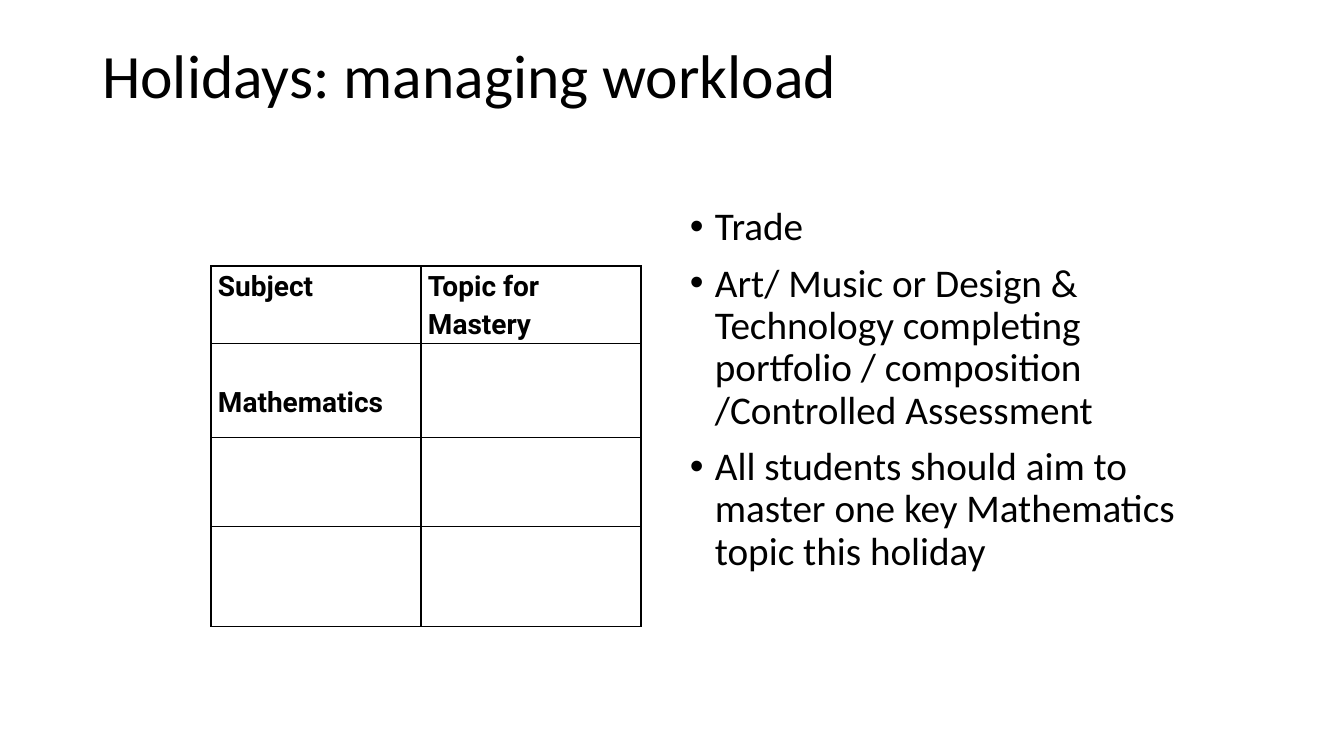
"""Build the slide on managing workload in the holidays."""
from lxml.etree import SubElement
from pptx import Presentation
from pptx.dml.color import RGBColor
from pptx.enum.text import MSO_ANCHOR, MSO_AUTO_SIZE, PP_ALIGN
from pptx.oxml import parse_xml
from pptx.oxml.ns import nsdecls, qn
from pptx.util import Pt

PX = 914400 / 100.8
BLACK = RGBColor(0, 0, 0)
TITLE = dict(name="Calibri", size=Pt(44), bold=False, color=BLACK)
BODY = dict(name="Calibri", size=Pt(28), bold=False, color=BLACK)
CELL = dict(name="Roboto", size=Pt(20), bold=True, color=BLACK)


def px(*lengths):
    return [round(n * PX) for n in lengths]


def write(p, text, fmt, spacing):
    p.alignment = PP_ALIGN.LEFT
    p.line_spacing = spacing
    r = p.add_run()
    r.text = text
    for key, value in fmt.items():
        if key == "color":
            r.font.color.rgb = value
        else:
            setattr(r.font, key, value)


prs = Presentation()
prs.slide_width, prs.slide_height = px(1344, 756)
s = prs.slides.add_slide(prs.slide_layouts[5])

title = s.shapes.title
title.left, title.top, title.width, title.height = px(92, 40, 1160, 146)
tf = title.text_frame
tf.auto_size = MSO_AUTO_SIZE.NONE
tf.vertical_anchor = MSO_ANCHOR.TOP
write(tf.paragraphs[0], "Holidays: managing workload", TITLE, 0.9)

points = [
    "Trade",
    "Art/ Music or Design & Technology completing portfolio / composition /Controlled Assessment",
    "All students should aim to master one key Mathematics topic this holiday",
]
tf = s.shapes.add_textbox(*px(680, 202, 572, 480)).text_frame
tf.word_wrap = True
indent, = px(25)
for i, text in enumerate(points):
    p = tf.add_paragraph() if i else tf.paragraphs[0]
    pPr = p._p.get_or_add_pPr()
    pPr.set("marL", str(indent))
    pPr.set("indent", str(-indent))
    SubElement(pPr, qn("a:buFont"), typeface="Arial")
    SubElement(pPr, qn("a:buChar"), char="•")
    p.space_before = Pt(10 if i else 0)
    write(p, text, BODY, 0.9)

rows = [("Subject", "Topic for Mastery"), ("Mathematics", ""), ("", ""), ("", "")]
widths = px(210, 220)
heights = px(76, 94, 89, 100)
left, top = px(211, 266)
table = s.shapes.add_table(4, 2, left, top, sum(widths), sum(heights)).table
table.first_row = table.horz_banding = False
for col, width in zip(table.columns, widths):
    col.width = width
for row, height, texts in zip(table.rows, heights, rows):
    row.height = height
    for cell, text in zip(row.cells, texts):
        cell.margin_left, cell.margin_right, cell.margin_top, cell.margin_bottom = px(
            7, 7, 38 if text == "Mathematics" else 0, 0)
        cell.fill.background()
        tcPr = cell._tc.get_or_add_tcPr()
        for i, side in enumerate("LRTB"):
            tcPr.insert(i, parse_xml(
                f'<a:ln{side} {nsdecls("a")} w="12700"><a:solidFill>'
                f'<a:srgbClr val="{BLACK}"/></a:solidFill></a:ln{side}>'))
        if text:
            write(cell.text_frame.paragraphs[0], text, CELL, 1.15)

prs.save("out.pptx")
